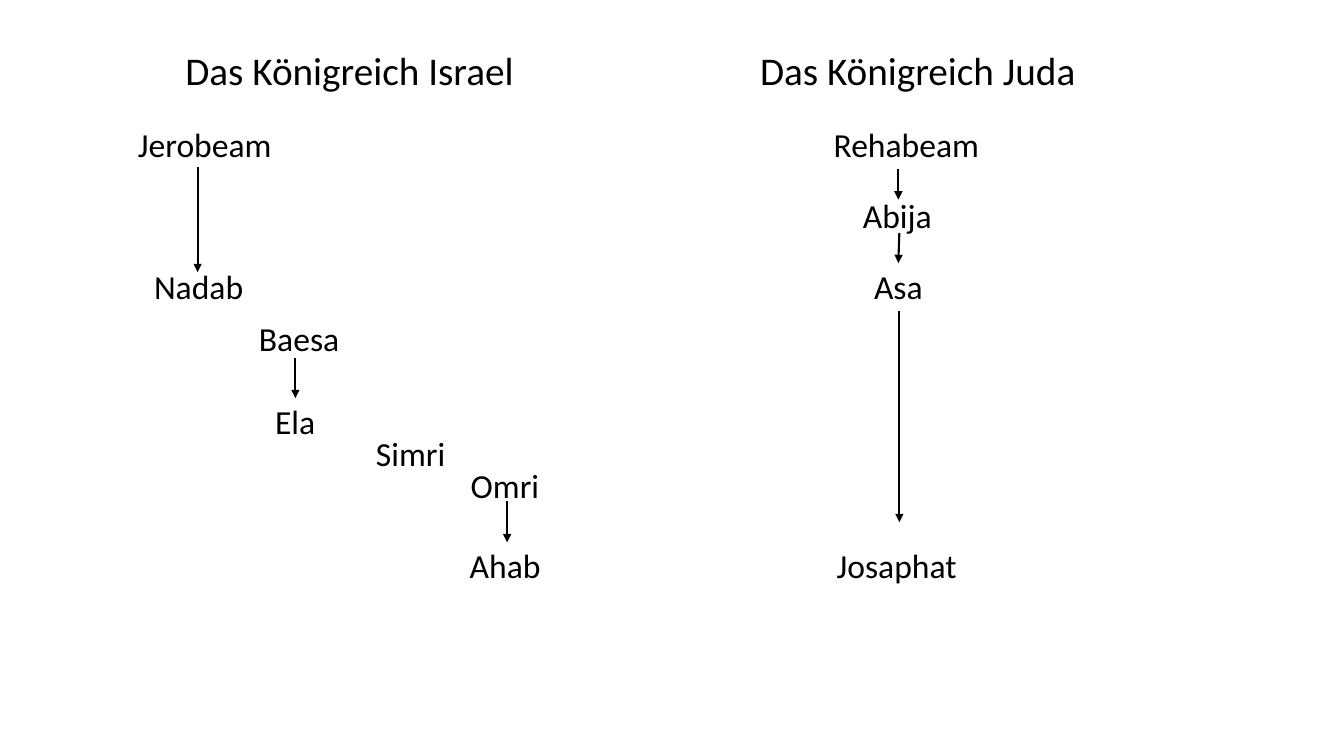
import pptx
import pptx.dml.color
import pptx.enum.shapes
import pptx.enum.text
import pptx.oxml.ns
import pptx.util
from lxml import etree

EMU_PER_PX = 9144
COLOURS = {"ink": "000000", "background": "FFFFFF"}
FONT = "Calibri"
TITLE_SIZE, NAME_SIZE = 28, 24
TITLE_TOP, TITLE_HEIGHT, NAME_HEIGHT = 41, 57, 50

TITLES = [("Das Königreich Israel", 174, 349), ("Das Königreich Juda", 744, 336)]
KINGS_OF_ISRAEL = [
    ("Jerobeam", 127, 118, 154),
    ("Nadab", 143, 259, 110),
    ("Baesa", 247, 310, 101),
    ("Ela", 263, 393, 61),
    ("Simri", 363, 425, 90),
    ("Omri", 457, 456, 89),
    ("Ahab", 456, 536, 91),
]
KINGS_OF_JUDAH = [
    ("Rehabeam", 817, 118, 166),
    ("Abija", 846, 188, 89),
    ("Asa", 857, 259, 69),
    ("Josaphat", 820, 536, 140),
]
SUCCESSIONS = [
    (196, 166, 196, 270),
    (293, 355, 293, 395),
    (503, 497, 503, 538),
    (891, 168, 891, 198),
    (892, 231, 891, 261),
    (892, 309, 892, 518),
]


def px(length):
    """Turn a length in px into EMU."""
    return pptx.util.Emu(length * EMU_PER_PX)


def colour(name):
    """Look up a named colour."""
    return pptx.dml.color.RGBColor.from_string(COLOURS[name])


def add_label(slide, text, left, top, width, height, size):
    """Add one line of text that does not wrap."""
    text_box = slide.shapes.add_textbox(px(left), px(top), px(width), px(height))
    text_frame = text_box.text_frame
    text_frame.text = text
    text_frame.word_wrap = False
    text_frame.auto_size = pptx.enum.text.MSO_AUTO_SIZE.SHAPE_TO_FIT_TEXT
    font = text_frame.paragraphs[0].runs[0].font
    font.name = FONT
    font.size = pptx.util.Pt(size)
    font.color.rgb = colour("ink")


def add_arrow(slide, start_x, start_y, end_x, end_y):
    """Add an arrow from a king to his son."""
    connector = slide.shapes.add_connector(
        pptx.enum.shapes.MSO_CONNECTOR.STRAIGHT,
        px(start_x), px(start_y), px(end_x), px(end_y))
    connector.line.color.rgb = colour("ink")
    connector.line.width = pptx.util.Pt(1.5)
    qualified = pptx.oxml.ns.qn
    line = connector.line._get_or_add_ln()
    etree.SubElement(line, qualified("a:tailEnd"), type="triangle")
    etree.SubElement(connector._element.spPr, qualified("a:effectLst"))


def main():
    """Build the slide of the two royal lines."""
    presentation = pptx.Presentation()
    presentation.slide_width = pptx.util.Inches(13.33)
    presentation.slide_height = pptx.util.Inches(7.5)
    slide = presentation.slides.add_slide(presentation.slide_layouts[6])
    slide.background.fill.solid()
    slide.background.fill.fore_color.rgb = colour("background")

    for title, left, width in TITLES:
        add_label(slide, title, left, TITLE_TOP, width, TITLE_HEIGHT, TITLE_SIZE)
    for king, left, top, width in KINGS_OF_ISRAEL + KINGS_OF_JUDAH:
        add_label(slide, king, left, top, width, NAME_HEIGHT, NAME_SIZE)
    for succession in SUCCESSIONS:
        add_arrow(slide, *succession)

    presentation.save("out.pptx")


if __name__ == "__main__":
    main()
